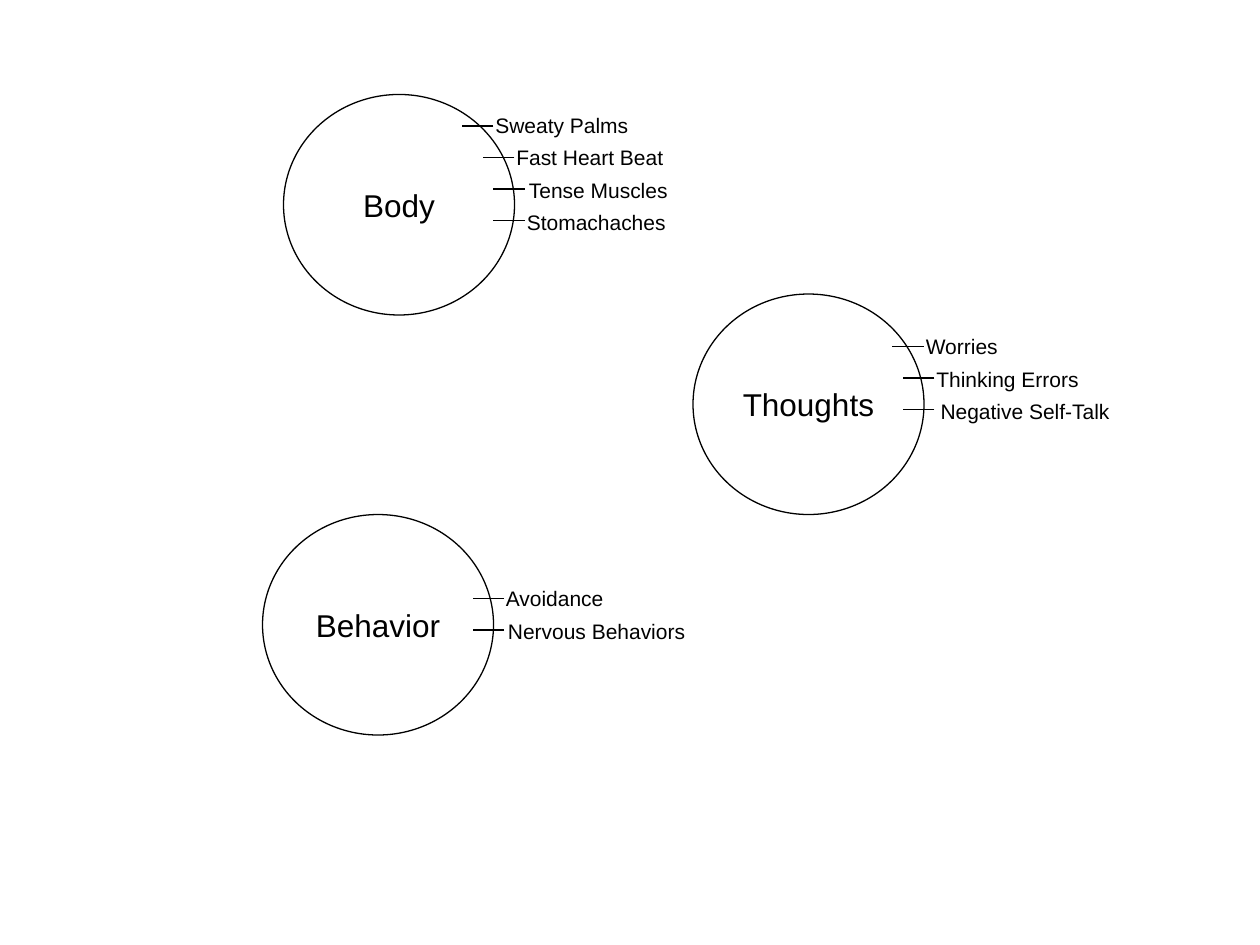
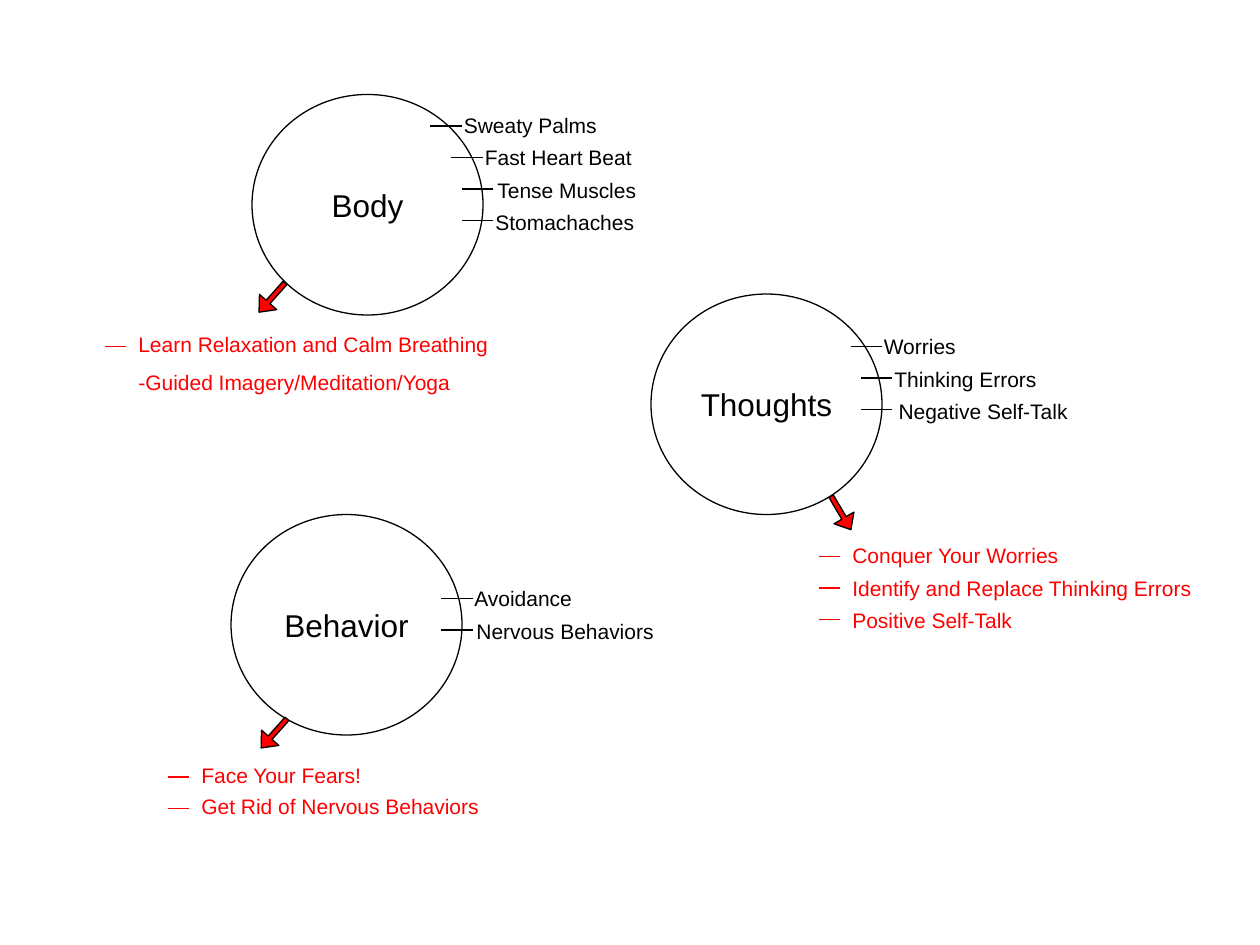
from dataclasses import dataclass

from lxml.etree import SubElement
from pptx import Presentation
from pptx.dml.color import RGBColor
from pptx.enum.shapes import MSO_CONNECTOR as CONN, MSO_SHAPE as SHAPE
from pptx.enum.text import MSO_AUTO_SIZE as AUTO, PP_ALIGN as ALIGN
from pptx.oxml.ns import qn
from pptx.util import Pt


@dataclass(frozen=True)
class Theme:
    ink: RGBColor = RGBColor(0, 0, 0)
    accent: RGBColor = RGBColor(255, 0, 0)
    font: str = "Arial"
    title: Pt = Pt(18)
    body: Pt = Pt(12)
    gap: Pt = Pt(7)
    line: Pt = Pt(0.75)


@dataclass(frozen=True)
class Entry:
    dash_x: int
    text_x: int
    width: int
    text: str


@dataclass(frozen=True)
class DashList:
    dash_top: int
    text_top: int
    text_pitch: int
    entries: tuple


@dataclass(frozen=True)
class Arrow:
    x: int
    y: int
    angle: float


@dataclass(frozen=True)
class Zone:
    name: str
    name_w: int
    symptoms: DashList
    arrow: Arrow
    coping: DashList


THEME = Theme()
EMU_PER_PX = 7620
CIRCLE_W, CIRCLE_H = 220, 210
NAME_H, TEXT_H = 48, 36
DASH_PITCH = 30
SYMPTOM_DASH, COPING_DASH = 30, 20
ARROW_W, ARROW_H = 22, 37

BODY = Zone(
    "Body", 92,
    DashList(30, 11, 31, (
        Entry(170, 190, 190, "Sweaty Palms"),
        Entry(190, 210, 180, "Fast Heart Beat"),
        Entry(200, 222, 180, "Tense Muscles"),
        Entry(200, 220, 160, "Stomachaches"))),
    Arrow(8, 175, 41.6),
    DashList(240, 220, 31, (
        Entry(-140, -120, 360,
              "Learn Relaxation and Calm Breathing\n-Guided Imagery/Meditation/Yoga"),)))
THOUGHTS = Zone(
    "Thoughts", 149,
    DashList(50, 32, 31, (
        Entry(190, 210, 170, "Worries"),
        Entry(200, 220, 170, "Thinking Errors"),
        Entry(200, 224, 206, "Negative Self-Talk"))),
    Arrow(170, 190, 329.5),
    DashList(250, 231, 31, (
        Entry(160, 180, 240, "Conquer Your Worries"),
        Entry(160, 180, 360, "Identify and Replace Thinking Errors"),
        Entry(160, 180, 300, "Positive Self-Talk"))))
BEHAVIOR = Zone(
    "Behavior", 143,
    DashList(80, 62, 31, (
        Entry(200, 220, 180, "Avoidance"),
        Entry(200, 222, 209, "Nervous Behaviors"))),
    Arrow(30, 190, 41.6),
    DashList(250, 230, 30, (
        Entry(-60, -40, 210, "Face Your Fears!"),
        Entry(-60, -40, 300, "Get Rid of Nervous Behaviors"))))


def px(*lengths):
    return [round(n * EMU_PER_PX) for n in lengths]


def add_text(shapes, x, y, w, h, text, size, color, align=ALIGN.LEFT, wrap=True):
    tf = shapes.add_textbox(*px(x, y, w, h)).text_frame
    tf.word_wrap = wrap
    tf.auto_size = AUTO.SHAPE_TO_FIT_TEXT
    tf.text = text
    for i, p in enumerate(tf.paragraphs):
        p.alignment = align
        p.font.name, p.font.size, p.font.color.rgb = THEME.font, size, color
        if i:
            p.space_before = THEME.gap


def add_outlined(shapes, kind, x, y, w, h):
    sp = shapes.add_shape(kind, *px(x, y, w, h))
    sp.shadow.inherit = False
    sp.fill.background()
    sp.line.color.rgb, sp.line.width = THEME.ink, THEME.line
    return sp


def add_dash(shapes, x, y, length, color):
    dash = shapes.add_connector(CONN.STRAIGHT, *px(x + length, y, x, y))
    dash.line.color.rgb, dash.line.width = color, THEME.line
    SubElement(dash._element.spPr, qn("a:effectLst"))


def add_circle(slide, x, y, zone):
    shapes = slide.shapes.add_group_shape().shapes
    add_outlined(shapes, SHAPE.OVAL, x, y, CIRCLE_W, CIRCLE_H)
    add_text(shapes, x + (CIRCLE_W - zone.name_w) / 2, y + (CIRCLE_H - NAME_H) / 2,
             zone.name_w, NAME_H, zone.name, THEME.title, THEME.ink, ALIGN.CENTER, False)


def add_dash_list(slide, x, y, items, dash_w, color):
    for i, entry in enumerate(items.entries):
        add_text(slide.shapes, x + entry.text_x, y + items.text_top + i * items.text_pitch,
                 entry.width, TEXT_H * (1 + entry.text.count("\n")), entry.text,
                 THEME.body, color)
        add_dash(slide.shapes, x + entry.dash_x, y + items.dash_top + i * DASH_PITCH,
                 dash_w, color)


def add_arrow(slide, x, y, arrow):
    sp = add_outlined(slide.shapes, SHAPE.DOWN_ARROW, x + arrow.x, y + arrow.y,
                      ARROW_W, ARROW_H)
    sp.fill.solid()
    sp.fill.fore_color.rgb = THEME.accent
    sp.rotation = arrow.angle
    sp.adjustments[0], sp.adjustments[1] = 0.22, 0.59


def add_anxiety_slide(prs, placed_zones, with_coping):
    slide = prs.slides.add_slide(prs.slide_layouts[6])
    for zone, x, y in placed_zones:
        add_circle(slide, x, y, zone)
        add_dash_list(slide, x, y, zone.symptoms, SYMPTOM_DASH, THEME.ink)
        if with_coping:
            add_arrow(slide, x, y, zone.arrow)
            add_dash_list(slide, x, y, zone.coping, COPING_DASH, THEME.accent)


def main():
    prs = Presentation()
    prs.slide_width, prs.slide_height = px(1200, 900)
    add_anxiety_slide(prs, ((BODY, 270, 90), (THOUGHTS, 660, 280), (BEHAVIOR, 250, 490)), False)
    add_anxiety_slide(prs, ((BODY, 240, 90), (THOUGHTS, 620, 280), (BEHAVIOR, 220, 490)), True)
    prs.save("out.pptx")


if __name__ == "__main__":
    main()
